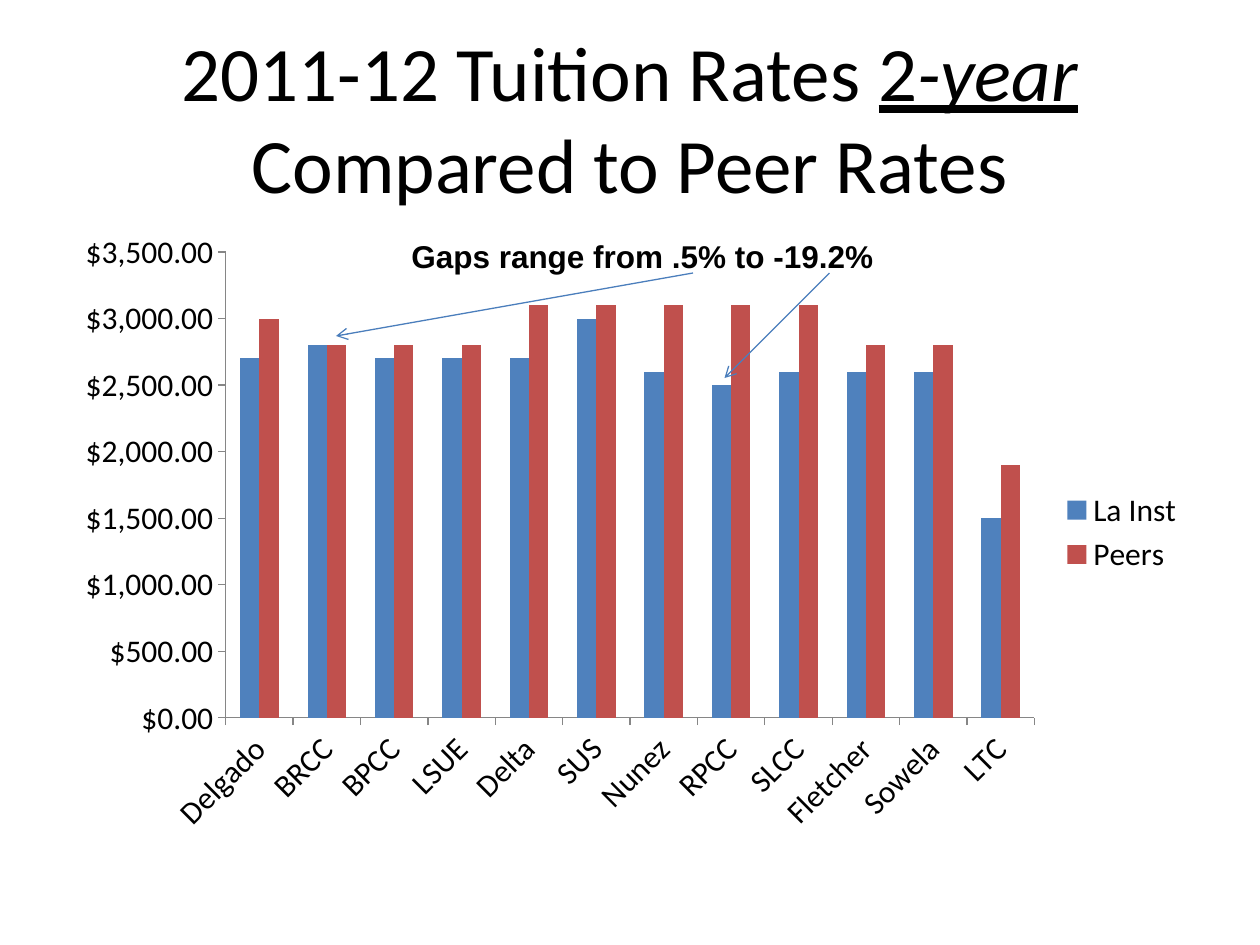
from dataclasses import dataclass

import lxml.etree
import pptx
import pptx.chart.data
import pptx.dml.color
import pptx.enum.chart
import pptx.enum.shapes
import pptx.enum.text
import pptx.oxml.ns
import pptx.util

Pt = pptx.util.Pt
RGBColor = pptx.dml.color.RGBColor

BLACK = RGBColor(0x00, 0x00, 0x00)
BLUE = RGBColor(0x4F, 0x81, 0xBD)
RED = RGBColor(0xC0, 0x50, 0x4D)
STEEL = RGBColor(0x4B, 0x7E, 0xBC)
GRAY = RGBColor(0x86, 0x86, 0x86)


@dataclass
class Run:
    text: str
    line: bool = False
    slant: bool = False


@dataclass
class Box:
    left: float
    top: float
    width: float
    height: float
    font: str
    size: float
    bold: bool
    wrap: bool
    align: pptx.enum.text.PP_ALIGN
    lines: list[list[Run]]


@dataclass
class Arrow:
    x: float
    y: float
    end_x: float
    end_y: float


@dataclass
class Series:
    name: str
    color: RGBColor
    values: list[int]


TITLE = Box(36, 21.6, 648, 90, "Calibri", 44, False, True,
            pptx.enum.text.PP_ALIGN.CENTER,
            [[Run("2011-12 Tuition Rates "), Run("2", True), Run("-year", True, True)],
             [Run("Compared to Peer Rates")]])
NOTE = Box(228, 131.5, 281, 29, "Arial", 18, True, False,
           pptx.enum.text.PP_ALIGN.LEFT, [[Run("Gaps range from .5% to -19.2%")]])
ARROWS = [Arrow(396, 156, 192, 192), Arrow(474, 156, 414, 216)]
SCHOOLS = ["Delgado", "BRCC", "BPCC", "LSUE", "Delta", "SUS",
           "Nunez", "RPCC", "SLCC", "Fletcher", "Sowela", "LTC"]
SERIES = [
    Series("La Inst", BLUE, [2700, 2800, 2700, 2700, 2700, 3000,
                             2600, 2500, 2600, 2600, 2600, 1500]),
    Series("Peers", RED, [3000, 2800, 2800, 2800, 3100, 3100,
                          3100, 3100, 3100, 2800, 2800, 1900]),
]


def add_text(slide, box: Box) -> None:
    shape = slide.shapes.add_textbox(Pt(box.left), Pt(box.top), Pt(box.width), Pt(box.height))
    frame = shape.text_frame
    frame.word_wrap = box.wrap
    frame.vertical_anchor = pptx.enum.text.MSO_ANCHOR.MIDDLE
    para = frame.paragraphs[0]
    para.alignment = box.align
    para.font.name = box.font
    para.font.size = Pt(box.size)
    para.font.bold = box.bold
    para.font.color.rgb = BLACK
    for index, line in enumerate(box.lines):
        if index:
            para.add_line_break()
        for part in line:
            run = para.add_run()
            run.text = part.text
            if part.line:
                run.font.underline = True
            if part.slant:
                run.font.italic = True


def add_chart(slide) -> None:
    data = pptx.chart.data.CategoryChartData(number_format='"$"#,##0.00')
    data.categories = SCHOOLS
    for item in SERIES:
        data.add_series(item.name, item.values)
    kind = pptx.enum.chart.XL_CHART_TYPE.COLUMN_CLUSTERED
    chart = slide.shapes.add_chart(kind, Pt(36), Pt(126), Pt(648), Pt(356.4), data).chart
    chart.has_title = False
    chart.font.name = "Calibri"
    chart.font.size = Pt(18)
    chart.font.color.rgb = BLACK
    chart.has_legend = True
    chart.legend.position = pptx.enum.chart.XL_LEGEND_POSITION.RIGHT
    chart.legend.include_in_layout = False
    plot = chart.plots[0]
    plot.gap_width = 150
    plot.overlap = 0
    plot.vary_by_categories = False
    for series, item in zip(plot.series, SERIES):
        series.invert_if_negative = False
        series.format.fill.solid()
        series.format.fill.fore_color.rgb = item.color
    for axis in (chart.category_axis, chart.value_axis):
        axis.has_major_gridlines = False
        axis.major_tick_mark = pptx.enum.chart.XL_TICK_MARK.OUTSIDE
        axis.format.line.color.rgb = GRAY
        axis.format.line.width = Pt(0.75)
    scale = chart.value_axis
    scale.minimum_scale = 0
    scale.maximum_scale = 3500
    scale.major_unit = 500
    scale.tick_labels.number_format = '"$"#,##0.00'
    scale.tick_labels.number_format_is_linked = False


def add_arrow(slide, arrow: Arrow) -> None:
    link = slide.shapes.add_connector(
        pptx.enum.shapes.MSO_CONNECTOR.STRAIGHT,
        Pt(arrow.x), Pt(arrow.y), Pt(arrow.end_x), Pt(arrow.end_y))
    link.line.color.rgb = STEEL
    link.line.width = Pt(0.75)
    name = pptx.oxml.ns.qn
    props = link._element.spPr
    lxml.etree.SubElement(props.find(name("a:ln")), name("a:tailEnd"), type="arrow")
    lxml.etree.SubElement(props, name("a:effectLst"))


def main() -> None:
    deck = pptx.Presentation()
    deck.slide_width = Pt(720)
    deck.slide_height = Pt(540)
    slide = deck.slides.add_slide(deck.slide_layouts[6])
    add_text(slide, TITLE)
    add_chart(slide)
    add_text(slide, NOTE)
    for arrow in ARROWS:
        add_arrow(slide, arrow)
    deck.save("out.pptx")


if __name__ == "__main__":
    main()
